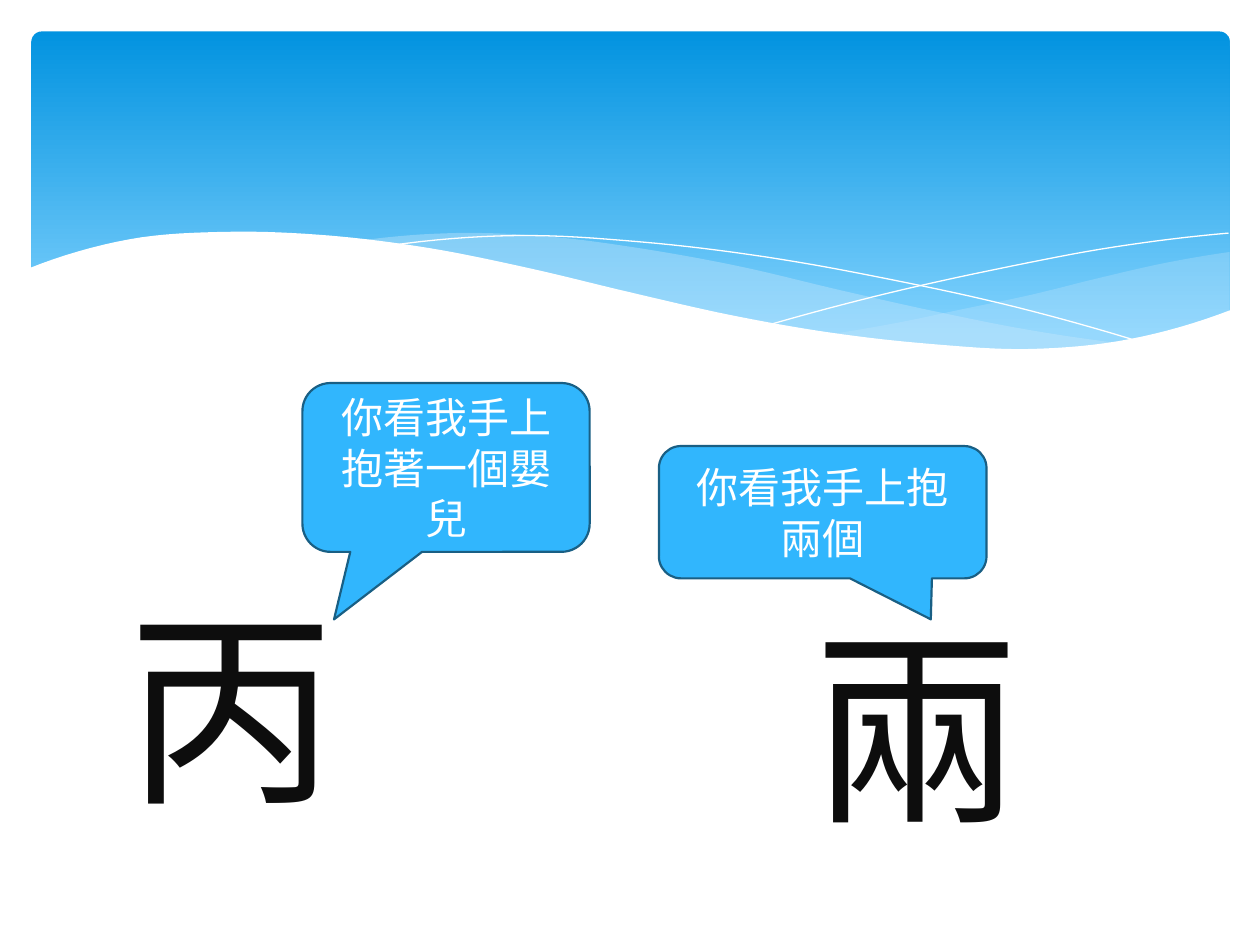
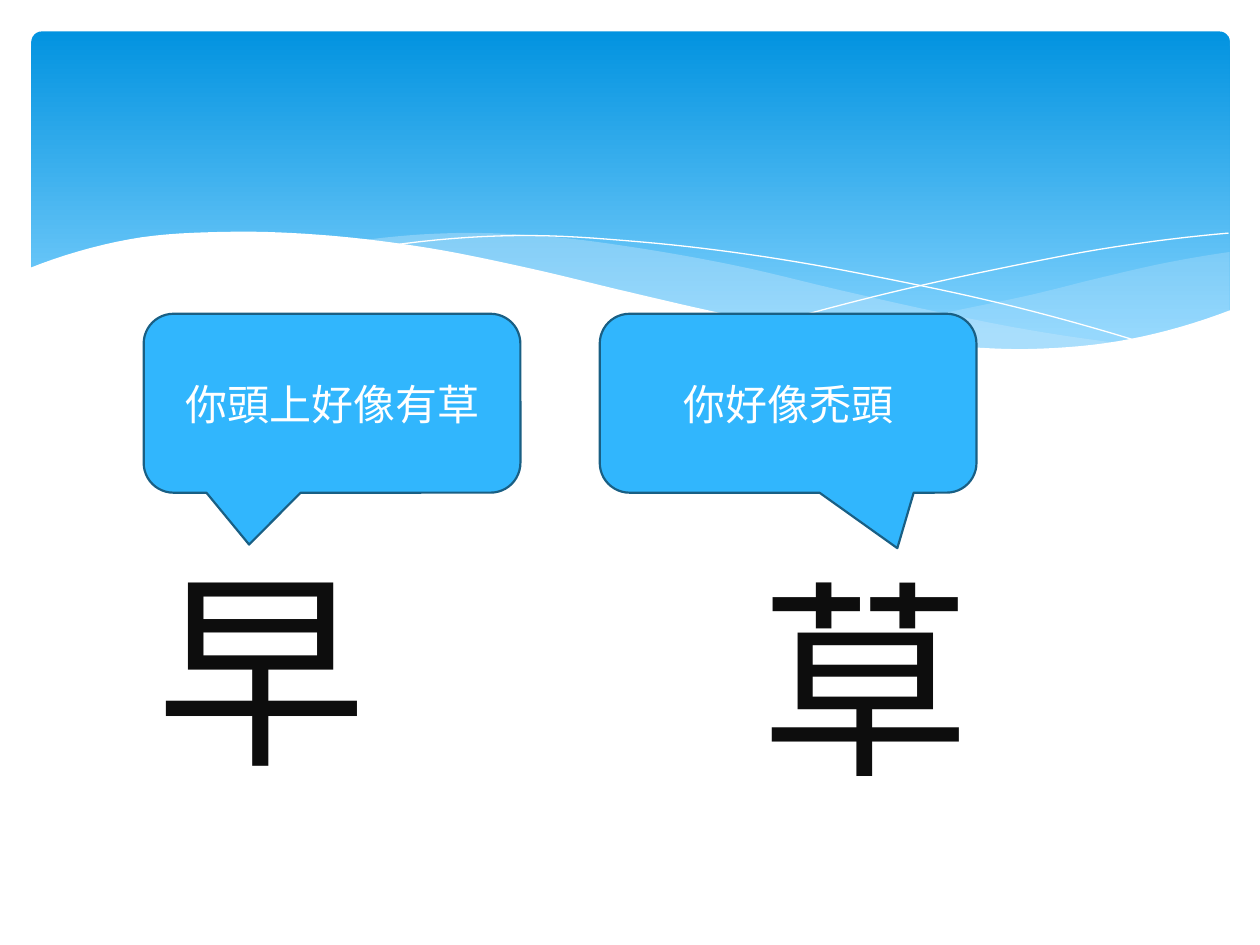
import lxml.etree
import pptx
import pptx.dml.color
import pptx.enum.lang
import pptx.enum.shapes
import pptx.enum.text
import pptx.oxml.ns
import pptx.util
from pptx.util import Inches

COLORS = {
    "band_top": "0293E0",
    "band_bottom": "83D3FE",
    "wave": "C6E7FC",
    "white": "FFFFFF",
    "callout": "31B6FD",
    "callout_line": "195F84",
    "glyph": "0D0D0D",
}

# Each page pairs a big character with what it says:
# (character, its place, speech, callout place, pointer tip, speech font).
# A place is left, top, width, height in inches. A tip is measured from the
# callout's centre, as shares of its width and height.
PAGES = [
    [
        ("丙", (0.91, 4.54, 1.97, 1.97),
         "你看我手上抱著一個嬰兒", (2.4, 3.04, 2.28, 1.34), (-0.39, 0.9), "Calibri"),
        ("兩", (6.34, 4.69, 1.89, 1.97),
         "你看我手上抱兩個", (5.23, 3.54, 2.6, 1.05), (0.33, 0.81), "Calibri"),
    ],
    [
        ("早", (1.14, 4.22, 1.74, 2),
         "你頭上好像有草", (1.14, 2.49, 2.99, 1.42), (-0.22, 0.79), "Arial"),
        ("草", (5.94, 4.3, 1.81, 2),
         "你好像禿頭", (4.76, 2.49, 2.99, 1.42), (0.29, 0.81), "Calibri"),
    ],
]


def color(name):
    return pptx.dml.color.RGBColor.from_string(COLORS[name])


def curve(left, right, heights, steps=8):
    """Return points of a smooth curve through heights at equal gaps from left to right."""
    first, second, third = heights[:3]
    before_last, next_to_last, last = heights[-3:]
    padded = [3 * first - 3 * second + third, *heights,
              3 * last - 3 * next_to_last + before_last]
    gap = (right - left) / (len(heights) - 1)
    points = [(left, first)]
    for index in range(len(heights) - 1):
        a, b, c, d = padded[index:index + 4]
        for step in range(1, steps + 1):
            t = step / steps
            # Catmull-Rom spline between heights b and c.
            y = b + t / 2 * (c - a + t * (2 * a - 5 * b + 4 * c - d
                                          + t * (3 * b - 3 * c + d - a)))
            points.append((left + (index + t) * gap, y))
    return points


def add_outline(page, points, closed):
    # The builder keeps whole units only, so points go in as lengths.
    start, *rest = [(Inches(x), Inches(y)) for x, y in points]
    builder = page.shapes.build_freeform(*start)
    builder.add_line_segments(rest, close=closed)
    outline = builder.convert_to_shape()
    outline.shadow.inherit = False
    return outline


def add_area(page, top_edge, bottom_edge, fill, opacity=100):
    """Fill the area between two edges, both given from left to right."""
    area = add_outline(page, top_edge + bottom_edge[::-1], closed=True)
    area.line.fill.background()
    area.fill.solid()
    area.fill.fore_color.rgb = color(fill)
    if opacity < 100:
        rgb = next(area.element.spPr.iter(pptx.oxml.ns.qn("a:srgbClr")))
        lxml.etree.SubElement(rgb, pptx.oxml.ns.qn("a:alpha"), val=str(opacity * 1000))


def add_hairline(page, points):
    hairline = add_outline(page, points, closed=False)
    hairline.fill.background()
    hairline.line.color.rgb = color("white")
    hairline.line.width = pptx.util.Pt(0)


def add_band(page):
    band = page.shapes.add_shape(
        pptx.enum.shapes.MSO_SHAPE.ROUNDED_RECTANGLE,
        Inches(0.25), Inches(0.25), Inches(9.51), Inches(2.7))
    band.adjustments[0] = 0.03
    band.shadow.inherit = False
    band.line.fill.background()
    band.fill.gradient()
    band.fill.gradient_angle = 270
    stops = (("band_top", 0), ("band_bottom", 0.9))
    for stop, (name, position) in zip(band.fill.gradient_stops, stops):
        stop.color.rgb = color(name)
        stop.position = position


def add_right_wave(page):
    left, right = 6.61, 9.76
    top_edge = curve(left, right, [2.65, 2.56, 2.45, 2.34, 2.21, 2.09, 2])
    bottom_edge = curve(left, right, [2.65, 2.72, 2.77, 2.78, 2.74, 2.65, 2.47])
    add_area(page, top_edge, bottom_edge, "wave", opacity=29)


def add_long_wave(page):
    left, right = 2.86, 8.93
    top_edge = curve(left, right, [1.91, 1.85, 1.88, 1.98, 2.12, 2.3, 2.47, 2.62, 2.73])
    bottom_edge = curve(left, right, [1.91, 2.03, 2.19, 2.37, 2.53, 2.66, 2.75, 2.78, 2.73])
    add_area(page, top_edge, bottom_edge, "wave", opacity=40)


def add_white_wave(page):
    """Cover the lower part of the band, so that it ends in a wave."""
    left, right, bottom = 0.23, 9.77, 3.29
    top_edge = curve(left, right, [2.13, 1.9, 1.84, 1.87, 1.97, 2.13, 2.32,
                                   2.5, 2.64, 2.73, 2.77, 2.69, 2.46])
    add_area(page, top_edge, [(left, bottom), (right, bottom)], "white")


def add_header(page):
    add_band(page)
    add_right_wave(page)
    add_long_wave(page)
    add_hairline(page, curve(3.09, 9.07, [1.95, 1.87, 1.92, 2.04, 2.22, 2.44, 2.72]))
    add_hairline(page, curve(6.13, 9.75, [2.57, 2.33, 2.13, 1.96, 1.85]))
    add_white_wave(page)


def write(box, text, size, font, text_color, align):
    frame = box.text_frame
    frame.word_wrap = True
    frame.vertical_anchor = pptx.enum.text.MSO_ANCHOR.MIDDLE
    para = frame.paragraphs[0]
    para.text = text
    para.alignment = align
    para.font.size = pptx.util.Pt(size)
    para.font.name = font
    para.font.color.rgb = color(text_color)
    para.font.language_id = pptx.enum.lang.MSO_LANGUAGE_ID.TRADITIONAL_CHINESE


def add_character(page, character, place):
    box = page.shapes.add_textbox(*map(Inches, place))
    box.text_frame.margin_top = Inches(0.17)
    write(box, character, 120, "Noto Sans CJK JP", "glyph", pptx.enum.text.PP_ALIGN.LEFT)


def add_callout(page, speech, place, tip, font):
    callout = page.shapes.add_shape(
        pptx.enum.shapes.MSO_SHAPE.ROUNDED_RECTANGULAR_CALLOUT, *map(Inches, place))
    callout.adjustments[0], callout.adjustments[1] = tip
    callout.shadow.inherit = False
    callout.fill.solid()
    callout.fill.fore_color.rgb = color("callout")
    callout.line.color.rgb = color("callout_line")
    callout.line.width = pptx.util.Pt(1.25)
    write(callout, speech, 24, font, "white", pptx.enum.text.PP_ALIGN.CENTER)


def add_page(deck, speakers):
    page = deck.slides.add_slide(deck.slide_layouts[6])
    add_header(page)
    for character, place, *_ in speakers:
        add_character(page, character, place)
    for _, _, speech, place, tip, font in speakers:
        add_callout(page, speech, place, tip, font)


def main():
    deck = pptx.Presentation()
    deck.slide_width, deck.slide_height = Inches(10), Inches(7.5)
    for speakers in PAGES:
        add_page(deck, speakers)
    deck.save("out.pptx")


if __name__ == "__main__":
    main()
